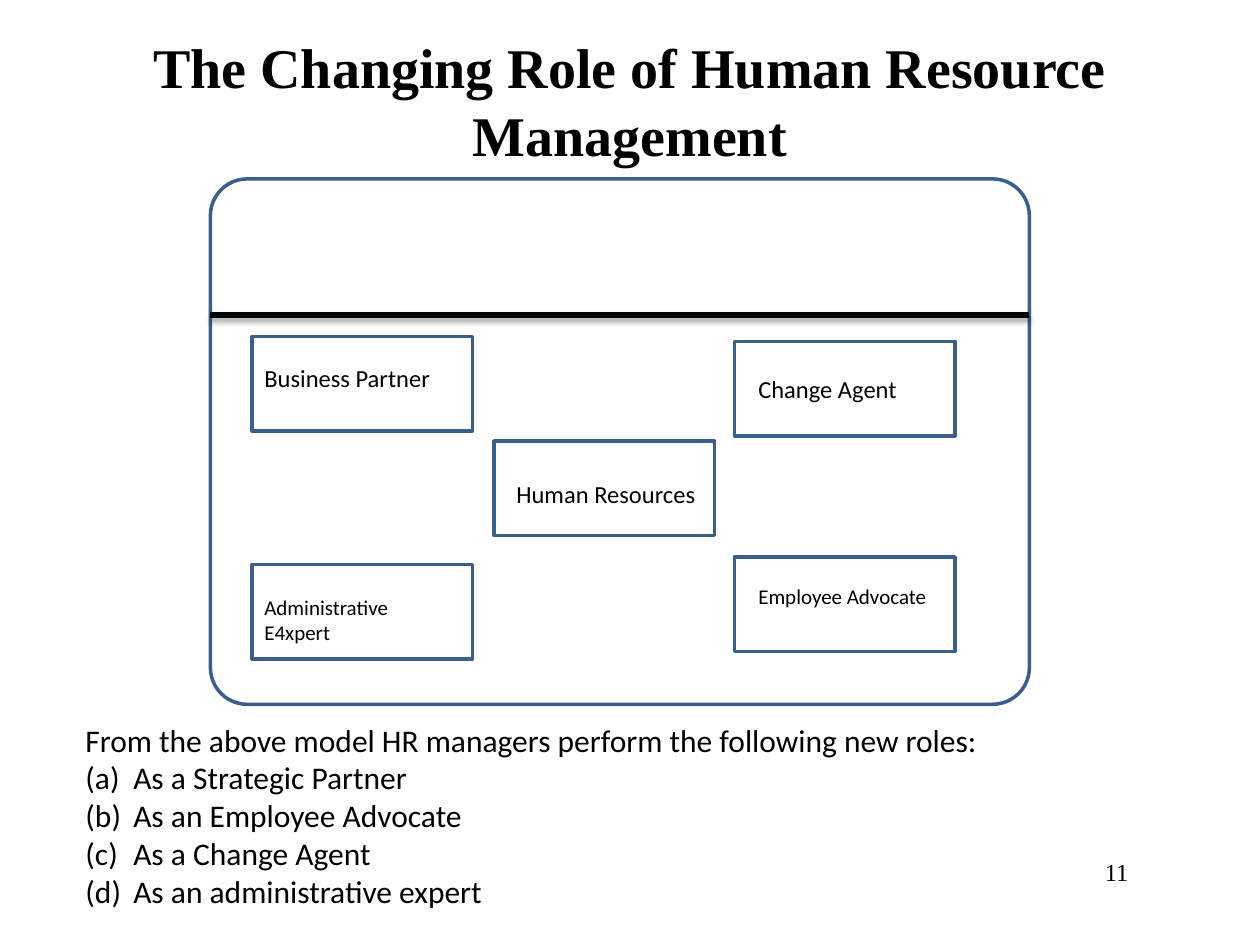
import pptx
import pptx.util
import pptx.dml.color
import pptx.enum.shapes
import pptx.enum.text
import pptx.oxml
import pptx.oxml.ns
from lxml import etree

Inches, Pt = pptx.util.Inches, pptx.util.Pt
RGBColor = pptx.dml.color.RGBColor
MSO_SHAPE = pptx.enum.shapes.MSO_SHAPE
PP_ALIGN = pptx.enum.text.PP_ALIGN
MSO_ANCHOR = pptx.enum.text.MSO_ANCHOR

BLACK = RGBColor(0x00, 0x00, 0x00)
BLUE = RGBColor(0x3A, 0x5F, 0x8C)
SERIF, SANS = "Times New Roman", "Calibri"

# Content
TITLE = "The Changing Role of Human Resource Management"
PAGE_NUMBER = "11"
INTRO = "From the above model HR managers perform the following new roles:"
NEW_ROLES = ["As a Strategic Partner", "As an Employee Advocate",
             "As a Change Agent", "As an administrative expert"]
# label, size, box left and top, label left and top, label height
ROLE_BOXES = [
    ("Business Partner", 14, (2, 2.67), (2, 2.83), 0.34),
    ("Administrative E4xpert", 12, (2, 4.48), (2, 4.67), 0.5),
    ("Change Agent", 14, (5.83, 2.71), (5.92, 2.92), 0.34),
    ("Human Resources", 14, (3.92, 3.5), (4, 3.75), 0.34),
    ("Employee Advocate", 12, (5.83, 4.42), (5.92, 4.58), 0.3),
]
BOX_WIDTH, BOX_HEIGHT, LABEL_WIDTH = 1.75, 0.75, 1.67
FRAME_LEFT, FRAME_TOP, FRAME_WIDTH, FRAME_HEIGHT = 1.67, 1.42, 6.5, 4.17
DIVIDER_Y = 2.5
LIST_INDENT = 0.38


def add_outline(slide, preset, left, top, width, height):
    outline = slide.shapes.add_shape(
        preset, Inches(left), Inches(top), Inches(width), Inches(height))
    outline.shadow.inherit = False
    outline.fill.background()
    outline.line.color.rgb = BLUE
    outline.line.width = Pt(2)
    return outline


def add_text(slide, lines, left, top, width, height, size, font, bold=False):
    frame = slide.shapes.add_textbox(
        Inches(left), Inches(top), Inches(width), Inches(height)).text_frame
    frame.word_wrap = True
    frame.text = "\n".join(lines)
    for paragraph in frame.paragraphs:
        for run in paragraph.runs:
            run.font.size = Pt(size)
            run.font.name = font
            run.font.bold = bold
            run.font.color.rgb = BLACK
    return frame


def add_lettering(paragraph):
    properties = paragraph._p.get_or_add_pPr()
    properties.set("marL", str(Inches(LIST_INDENT)))
    properties.set("indent", str(-Inches(LIST_INDENT)))
    numbering = etree.SubElement(properties, pptx.oxml.ns.qn("a:buAutoNum"))
    numbering.set("type", "alphaLcParenBoth")


def add_drop_shadow(connector):
    connector._element.spPr.append(pptx.oxml.parse_xml(
        f'<a:effectLst {pptx.oxml.ns.nsdecls("a")}>'
        f'<a:outerShdw blurRad="{Pt(3.1)}" dist="{Pt(1.8)}" dir="5400000" rotWithShape="0">'
        '<a:srgbClr val="000000"><a:alpha val="35000"/></a:srgbClr>'
        '</a:outerShdw></a:effectLst>'))


def main():
    deck = pptx.Presentation()
    deck.slide_width, deck.slide_height = Inches(10), Inches(7.5)
    slide = deck.slides.add_slide(deck.slide_layouts[6])

    # Title
    title = add_text(slide, [TITLE], 0.5, 0.17, 9, 1.25, 32, SERIF, bold=True)
    title.vertical_anchor = MSO_ANCHOR.MIDDLE
    title.paragraphs[0].alignment = PP_ALIGN.CENTER

    # Model frame with its divider
    model = add_outline(slide, MSO_SHAPE.ROUNDED_RECTANGLE,
                        FRAME_LEFT, FRAME_TOP, FRAME_WIDTH, FRAME_HEIGHT)
    model.adjustments[0] = 0.07
    divider = slide.shapes.add_connector(
        pptx.enum.shapes.MSO_CONNECTOR.STRAIGHT,
        Inches(FRAME_LEFT), Inches(DIVIDER_Y),
        Inches(FRAME_LEFT + FRAME_WIDTH), Inches(DIVIDER_Y))
    divider.line.color.rgb = BLACK
    divider.line.width = Pt(3)
    add_drop_shadow(divider)

    # Role boxes and their labels
    for label, size, box_at, label_at, label_height in ROLE_BOXES:
        add_outline(slide, MSO_SHAPE.RECTANGLE, *box_at, BOX_WIDTH, BOX_HEIGHT)
        add_text(slide, [label], *label_at, LABEL_WIDTH, label_height, size, SANS)

    # Lettered list of new roles
    roles = add_text(slide, [INTRO] + NEW_ROLES, 0.58, 5.67, 8.5, 1.62, 18, SANS)
    for paragraph in roles.paragraphs[1:]:
        add_lettering(paragraph)

    # Page number
    add_text(slide, [PAGE_NUMBER], 8.67, 6.75, 0.5, 0.34, 14, SERIF)

    deck.save("out.pptx")


if __name__ == "__main__":
    main()
